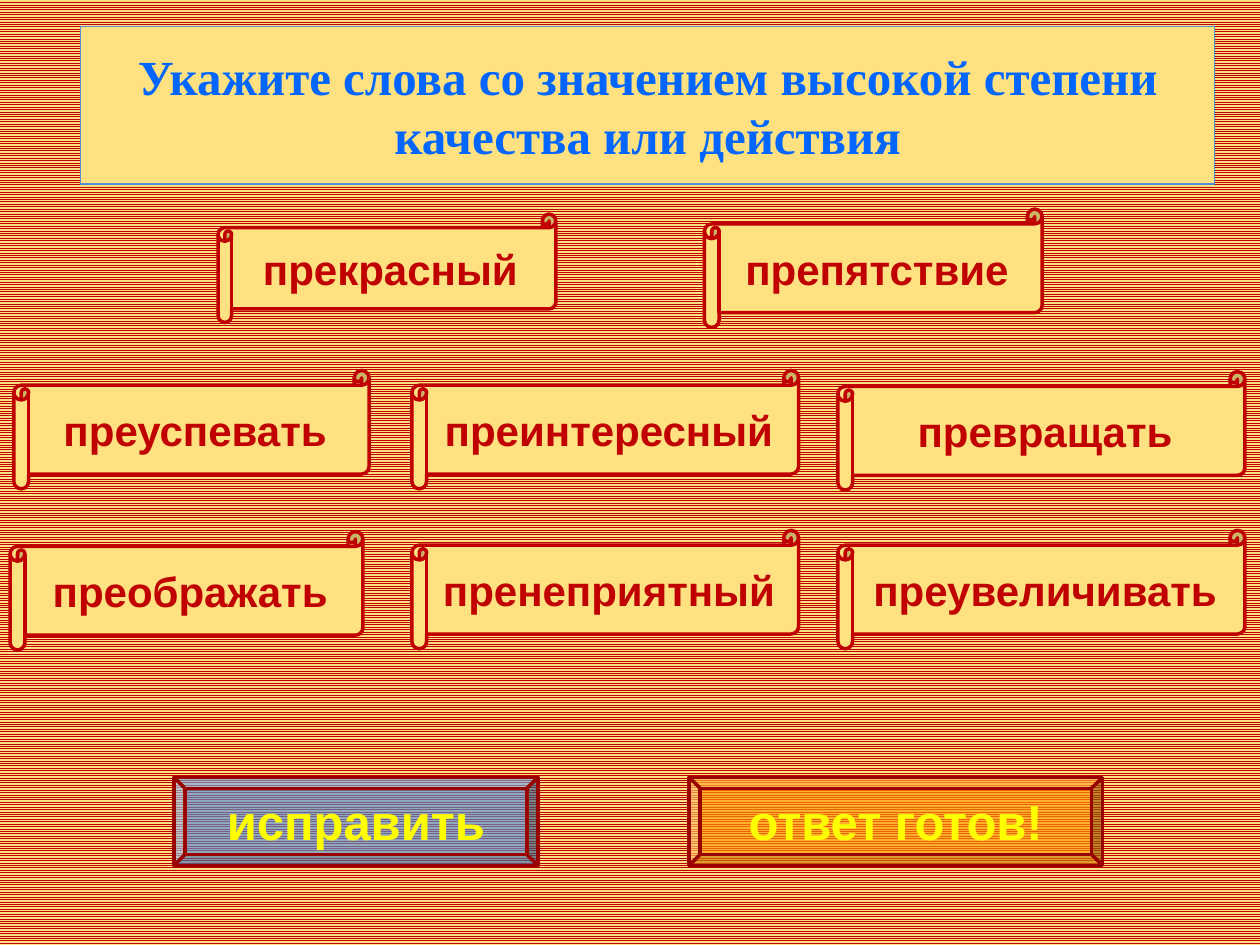
from lxml.etree import SubElement
from pptx import Presentation
from pptx.dml.color import RGBColor
from pptx.enum.dml import MSO_PATTERN
from pptx.enum.shapes import MSO_SHAPE as Kind
from pptx.enum.text import MSO_ANCHOR, PP_ALIGN
from pptx.oxml.ns import qn
from pptx.util import Pt

CREAM = RGBColor(0xFF, 0xE1, 0x81)
RED = RGBColor(0xC0, 0x00, 0x00)
MAROON = RGBColor(0x99, 0x00, 0x00)
BLUE = RGBColor(0x00, 0x66, 0xFF)
STEEL = RGBColor(0x55, 0x8E, 0xD5)
ORANGE = RGBColor(0xFF, 0x99, 0x00)
YELLOW = RGBColor(0xFF, 0xFF, 0x00)

TITLE = "Укажите слова со значением высокой степени качества или действия"
# word, left, top, width, height
WORDS = [
    ("преуспевать", 7.9, 211.7, 203, 67.7),
    ("преображать", 5.8, 303.8, 201.6, 67.7),
    ("преинтересный", 235.4, 211.7, 221, 67.7),
    ("пренеприятный", 235.4, 303.1, 221, 67.7),
    ("превращать", 478.8, 212.4, 232.6, 67.7),
    ("преувеличивать", 478.8, 303.1, 232.6, 67.7),
    ("прекрасный", 124.6, 122.4, 193, 61.9),
    ("препятствие", 402.5, 119.5, 193, 67.7),
]
# label, left, width, fill
KEYS = [
    ("исправить", 99.4, 208, STEEL),
    ("ответ готов!", 393.8, 236.2, ORANGE),
]
KEY_TOP, KEY_H = 444.2, 50.4

HEAD_FONT = {"name": "Times New Roman", "size": Pt(28), "bold": True}
WORD_FONT = {"name": "Arial", "size": Pt(24), "bold": True}
KEY_FONT = {"name": "Arial", "size": Pt(28), "bold": True}
FRAME = {"word_wrap": True, "vertical_anchor": MSO_ANCHOR.MIDDLE,
         "margin_left": 0, "margin_right": 0}


def put(obj, vals):
    for key, val in vals.items():
        setattr(obj, key, val)


def dress(shape, text, font, ink, fill, edge, width):
    """Fill, outline and label a shape; return its run."""
    shape.fill.solid()
    shape.fill.fore_color.rgb = fill
    shape.line.color.rgb = edge
    shape.line.width = Pt(width)
    frame = shape.text_frame
    put(frame, FRAME)
    para = frame.paragraphs[0]
    para.alignment = PP_ALIGN.CENTER
    run = para.add_run()
    run.text = text
    put(run.font, font)
    run.font.color.rgb = ink
    return run


def add(slide, kind, *box):
    shape = slide.shapes.add_shape(kind, *map(Pt, box))
    shape.shadow.inherit = False
    return shape


def fade(shape, percent):
    """Make the solid fill partly opaque."""
    tint = shape.fill._xPr.find(qn("a:solidFill"))[0]
    SubElement(tint, qn("a:alpha"), val=str(percent * 1000))


def rim(run, color, width):
    """Outline the letters of a run."""
    props = run._r.get_or_add_rPr()
    line = SubElement(props, qn("a:ln"), w=str(Pt(width)))
    fill = SubElement(line, qn("a:solidFill"))
    SubElement(fill, qn("a:srgbClr"), val=str(color))
    props.insert(0, line)


def main():
    deck = Presentation()
    deck.slide_width, deck.slide_height = Pt(720), Pt(540)
    slide = deck.slides.add_slide(deck.slide_layouts[5])

    back = slide.background.fill
    back.patterned()
    back.pattern = MSO_PATTERN.LIGHT_HORIZONTAL
    back.fore_color.rgb = RED
    back.back_color.rgb = CREAM

    head = slide.shapes.title
    put(head, {"left": Pt(46.1), "top": Pt(15.1),
               "width": Pt(648), "height": Pt(90)})
    dress(head, TITLE, HEAD_FONT, BLUE, CREAM, STEEL, 0.75)

    for word, *box in WORDS:
        scroll = add(slide, Kind.HORIZONTAL_SCROLL, *box)
        dress(scroll, word, WORD_FONT, RED, CREAM, RED, 2)

    for label, left, width, fill in KEYS:
        key = add(slide, Kind.BEVEL, left, KEY_TOP, width, KEY_H)
        run = dress(key, label, KEY_FONT, YELLOW, fill, MAROON, 2)
        fade(key, 66)
        rim(run, RED, 1.42)

    deck.save("out.pptx")


if __name__ == "__main__":
    main()
